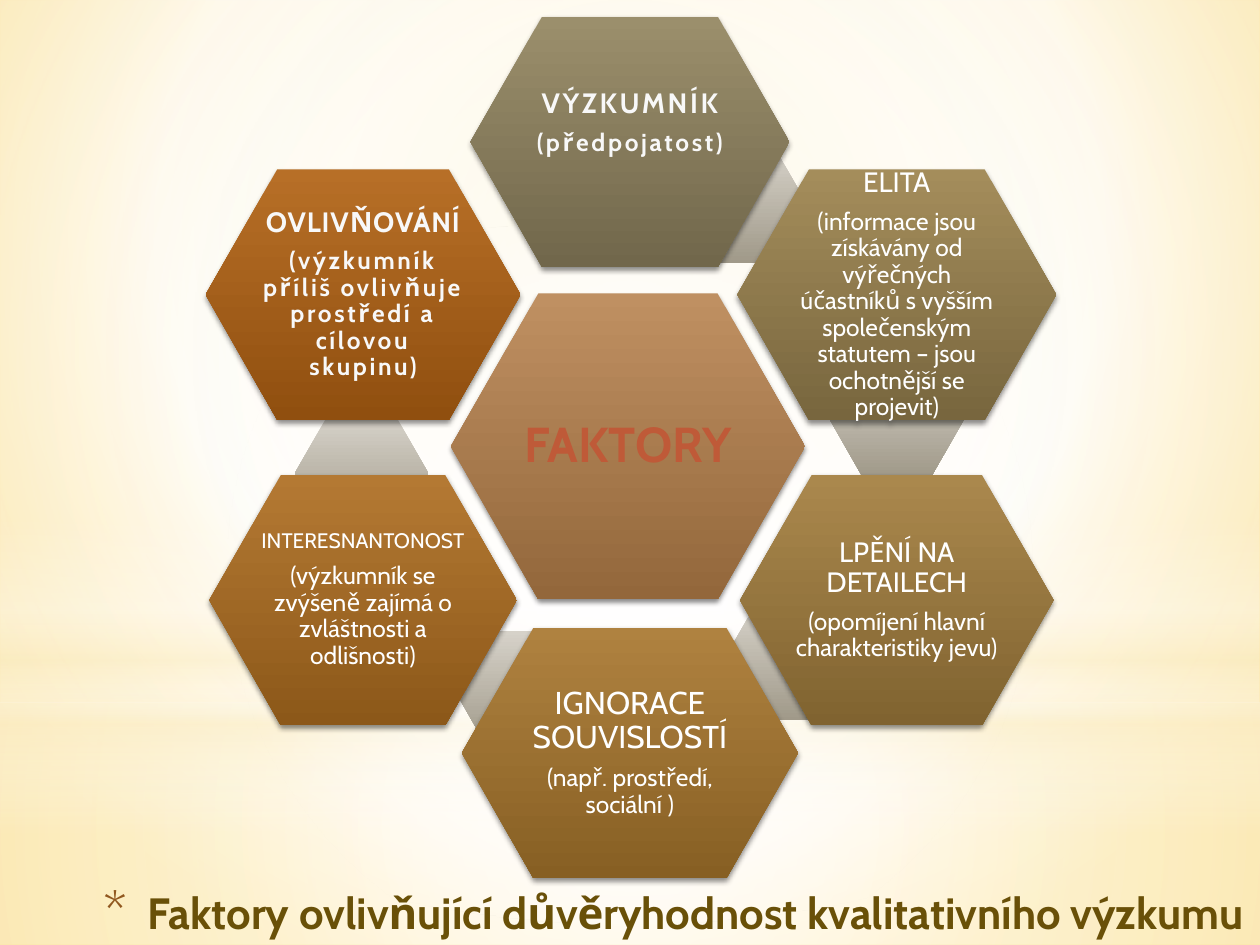
"""Build a slide with a ring of hexagons showing what affects the credibility of qualitative research."""
import pptx
import pptx.dml.color
import pptx.enum.shapes
import pptx.enum.text
import pptx.oxml
import pptx.oxml.ns
import pptx.util
from lxml import etree

Cm = pptx.util.Cm
Pt = pptx.util.Pt
RGBColor = pptx.dml.color.RGBColor
Shape = pptx.enum.shapes.MSO_SHAPE
Align = pptx.enum.text.PP_ALIGN
Anchor = pptx.enum.text.MSO_ANCHOR
qn = pptx.oxml.ns.qn

FONT = "Cabin"
WHITE = RGBColor(0xFF, 0xFF, 0xFF)
SOFT_WHITE = RGBColor(0xF8, 0xF8, 0xF8)
BLACK = RGBColor(0, 0, 0)
CREAM = RGBColor(0xFB, 0xEE, 0xC9)
PALE_YELLOW = RGBColor(0xFE, 0xEA, 0xB3)
YELLOW = RGBColor(0xFF, 0xD9, 0x6C)
TITLE_BROWN = RGBColor(0x69, 0x50, 0x08)
BULLET_BROWN = RGBColor(0x91, 0x58, 0x1F)
CENTRE_RED = RGBColor(0xBF, 0x5A, 0x38)
LINK_COLOURS = RGBColor(0xD6, 0xD2, 0xC9), RGBColor(0xA0, 0x99, 0x89)
CENTRE_COLOURS = RGBColor(0xBF, 0x90, 0x62), RGBColor(0x93, 0x67, 0x3B)

TITLE = "Faktory ovlivňující důvěryhodnost kvalitativního výzkumu"
CENTRE_TEXT = "FAKTORY"
BOLD_HEAD = dict(size=16, colour=SOFT_WHITE, bold=True)
BOLD_NOTE = dict(size=14, colour=SOFT_WHITE, bold=True, spacing=1.5)
HEAD = dict(size=16)
NOTE = dict(size=14)

# column, row, width, top colour, bottom colour, bottom inset, heading, note
FACTORS = [
    (0, -2, 6.43, RGBColor(0x9B, 0x8F, 0x6C), RGBColor(0x71, 0x67, 0x4B), 0.8,
     ("VÝZKUMNÍK", BOLD_HEAD | dict(spacing=1.5)), ("(předpojatost)", BOLD_NOTE)),
    (1, -1, 6.43, RGBColor(0xA4, 0x8D, 0x5B), RGBColor(0x78, 0x66, 0x3E), 0.05,
     ("ELITA", HEAD),
     ("(informace jsou získávány od výřečných účastníků s vyšším společenským "
      "statutem – jsou ochotnější se projevit)", NOTE)),
    (1, 1, 6.32, RGBColor(0xAA, 0x88, 0x4D), RGBColor(0x80, 0x63, 0x30), 0.05,
     ("LPĚNÍ NA DETAILECH", HEAD), ("(opomíjení hlavní charakteristiky jevu)", NOTE)),
    (0, 2, 6.78, RGBColor(0xAF, 0x82, 0x40), RGBColor(0x87, 0x5F, 0x23), 0.05,
     ("IGNORACE SOUVISLOSTÍ", dict(size=18)), ("(např. prostředí, sociální )", NOTE)),
    (-1, 1, 6.2, RGBColor(0xB4, 0x79, 0x33), RGBColor(0x8C, 0x58, 0x19), 0.05,
     ("INTERESNANTONOST", dict(size=12)),
     ("(výzkumník se zvýšeně zajímá o zvláštnosti a odlišnosti)", NOTE)),
    (-1, -1, 6.35, RGBColor(0xB7, 0x6F, 0x27), RGBColor(0x90, 0x4F, 0x0F), 0.05,
     ("OVLIVŇOVÁNÍ", BOLD_HEAD | dict(spacing=0.5)),
     ("(výzkumník příliš ovlivňuje prostředí a cílovou skupinu)", BOLD_NOTE)),
]
LINK_CENTRES = [(14.94, 4.15), (18.08, 8.47), (15.9, 13.37), (10.49, 13.88), (7.29, 9.54)]

SLIDE_WIDTH, SLIDE_HEIGHT = 25.4, 19.05
RING_X, RING_Y = 12.7, 9.02
COLUMN_STEP, ROW_STEP = 5.38, 3.08
FACTOR_HEIGHT = 5.05
MIDDLE = (50, 50, 50, 50)

# shape kind, top, height, stops of (position, colour, opacity), focus
BACKDROPS = [
    (Shape.RECTANGLE, 14.17, 4.88, [(0, WHITE, 91), (37, WHITE, 76), (100, CREAM, 79)], MIDDLE),
    (Shape.RECTANGLE, 0, 14.17, [(0, WHITE, 89), (48, WHITE, 62), (100, CREAM, 79)], MIDDLE),
    (Shape.RECTANGLE, 10.46, 6.35,
     [(0, WHITE, 0), (29, WHITE, 30), (45, CREAM, 40), (55, WHITE, 26),
      (65, CREAM, 60), (100, WHITE, 0)], None),
    (Shape.OVAL, 4.45, 14.17, [(0, WHITE, 100), (56, WHITE, 0)], MIDDLE),
]


def add_element(parent, tag, **attributes):
    child = etree.SubElement(parent, qn(tag))
    for name, value in attributes.items():
        child.set(name, str(value))
    return child


def add_colour(parent, colour, opacity):
    add_element(add_element(parent, "a:srgbClr", val=colour), "a:alpha", val=opacity * 1000)


def paint_gradient(owner, element, stops, focus=None):
    owner.fill.gradient()
    gradient = next(element.iter(qn("a:gradFill")))
    gradient.clear()
    stop_list = add_element(gradient, "a:gsLst")
    for position, colour, opacity in stops:
        add_colour(add_element(stop_list, "a:gs", pos=position * 1000), colour, opacity)
    if focus:
        edges = {edge: value * 1000 for edge, value in zip("ltrb", focus)}
        add_element(add_element(gradient, "a:path", path="circle"), "a:fillToRect", **edges)
    else:
        add_element(gradient, "a:lin", ang=90 * 60000, scaled=0)


def add_painted(page, kind, left, top, width, height, stops, focus=None):
    shape = page.shapes.add_shape(kind, Cm(left), Cm(top), Cm(width), Cm(height))
    paint_gradient(shape, shape._element, stops, focus)
    shape.line.fill.background()
    shape.shadow.inherit = False
    return shape


def add_hexagon(page, centre_x, centre_y, width, height, colours, raised=True):
    stops = [(0, colours[0], 100), (100, colours[1], 100)]
    shape = add_painted(page, Shape.HEXAGON, centre_x - width / 2, centre_y - height / 2,
                        width, height, stops)
    shape.adjustments[0] = 0.286
    if raised:
        effects = next(shape._element.iter(qn("a:effectLst")))
        shadow = add_element(effects, "a:outerShdw", blurRad=Pt(3.1), dist=Pt(1.8),
                             dir=90 * 60000, rotWithShape=0)
        add_colour(shadow, BLACK, 45)
    return shape


def write_text(para, text, size, colour=WHITE, bold=False, spacing=0, align=Align.CENTER):
    para.alignment = align
    span = para.add_run()
    span.text = text
    span.font.name = FONT
    span.font.size = Pt(size)
    span.font.bold = bold
    span.font.color.rgb = colour
    if spacing:
        span._r.get_or_add_rPr().set("spc", str(int(spacing * 100)))


def fill_hexagon(shape, lines, bottom=0.05):
    frame = shape.text_frame
    frame.word_wrap = True
    frame.vertical_anchor = Anchor.MIDDLE
    frame.margin_left = frame.margin_right = frame.margin_top = Cm(0.05)
    frame.margin_bottom = Cm(bottom)
    for index, (text, style) in enumerate(lines):
        para = frame.add_paragraph() if index else frame.paragraphs[0]
        para.line_spacing = 0.9
        para.space_after = Pt(6)
        write_text(para, text, **style)


def place_title(page):
    title = page.shapes.title
    page.shapes._spTree.append(title._element)
    title.left, title.top, title.width, title.height = Cm(-0.05), Cm(17.73), Cm(25.37), Cm(1.32)
    frame = title.text_frame
    frame.word_wrap = True
    frame.auto_size = pptx.enum.text.MSO_AUTO_SIZE.NONE
    frame.vertical_anchor = Anchor.MIDDLE
    para = frame.paragraphs[0]
    properties = para._p.get_or_add_pPr()
    properties.set("marL", str(Cm(0.89)))
    properties.set("indent", str(Cm(-0.89)))
    add_element(add_element(properties, "a:buClr"), "a:srgbClr", val=BULLET_BROWN)
    add_element(properties, "a:buSzPct", val=128000)
    add_element(properties, "a:buFont", typeface=FONT)
    add_element(properties, "a:buChar", char="*")
    write_text(para, TITLE, 25, colour=TITLE_BROWN, bold=True, align=Align.RIGHT)


def main():
    deck = pptx.Presentation()
    deck.slide_width, deck.slide_height = Cm(SLIDE_WIDTH), Cm(SLIDE_HEIGHT)
    page = deck.slides.add_slide(deck.slide_layouts[5])
    paint_gradient(page.background, page._element,
                   [(0, PALE_YELLOW, 100), (60, WHITE, 100), (100, YELLOW, 100)], (20, 10, 20, 60))
    for kind, top, height, stops, focus in BACKDROPS:
        add_painted(page, kind, 0, top, SLIDE_WIDTH, height, stops, focus)
    place_title(page)
    centre = add_hexagon(page, 12.66, 9, 7.14, 6.17, CENTRE_COLOURS)
    fill_hexagon(centre, [(CENTRE_TEXT, dict(size=28, colour=CENTRE_RED, bold=True))])
    for centre_x, centre_y in LINK_CENTRES:
        add_hexagon(page, centre_x, centre_y, 2.69, 2.31, LINK_COLOURS, raised=False)
    for column, row, width, upper, lower, bottom, *lines in FACTORS:
        shape = add_hexagon(page, RING_X + column * COLUMN_STEP, RING_Y + row * ROW_STEP,
                            width, FACTOR_HEIGHT, (upper, lower))
        fill_hexagon(shape, lines, bottom)
    deck.save("out.pptx")


if __name__ == "__main__":
    main()
